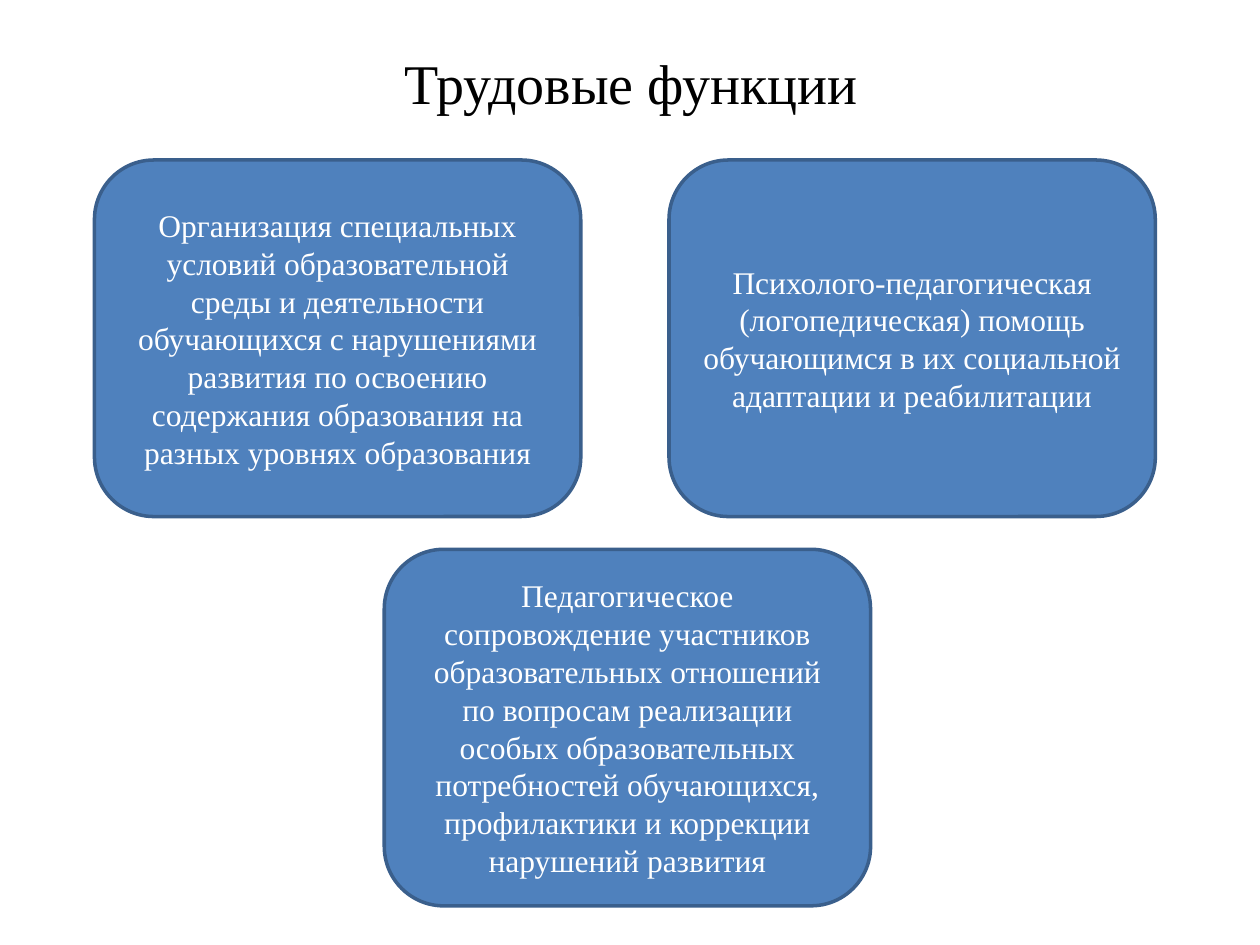
"""Build a slide with three rounded boxes of job functions."""
from pptx import Presentation
from pptx.dml.color import RGBColor
from pptx.enum.shapes import MSO_SHAPE
from pptx.enum.text import MSO_ANCHOR, PP_ALIGN
from pptx.util import Inches, Pt

BLACK = RGBColor(0x00, 0x00, 0x00)
WHITE = RGBColor(0xFF, 0xFF, 0xFF)
BLUE = RGBColor(0x4F, 0x81, 0xBD)
NAVY = RGBColor(0x3A, 0x5F, 0x8C)


def write(shape, text, size, color):
    frame = shape.text_frame
    frame.word_wrap = True
    frame.vertical_anchor = MSO_ANCHOR.MIDDLE
    line = frame.paragraphs[0]
    line.text = text
    line.alignment = PP_ALIGN.CENTER
    line.font.name = "Times New Roman"
    line.font.size = Pt(size)
    line.font.color.rgb = color


deck = Presentation()
deck.slide_width = Inches(10)
deck.slide_height = Inches(7.5)
slide = deck.slides.add_slide(deck.slide_layouts[6])

title = slide.shapes.add_textbox(Inches(0.51), Inches(0.03), Inches(9), Inches(1.25))
write(title, "Трудовые функции", 32, BLACK)

items = [
    (0.75, 1.27, "Организация специальных условий образовательной среды и "
                 "деятельности обучающихся с нарушениями развития по освоению "
                 "содержания образования на разных уровнях образования"),
    (3.05, 4.36, "Педагогическое сопровождение участников образовательных "
                 "отношений по вопросам реализации особых образовательных "
                 "потребностей обучающихся, профилактики и коррекции "
                 "нарушений развития"),
    (5.31, 1.27, "Психолого-педагогическая (логопедическая) помощь обучающимся "
                 "в их социальной адаптации и реабилитации"),
]
for left, top, text in items:
    box = slide.shapes.add_shape(
        MSO_SHAPE.ROUNDED_RECTANGLE,
        Inches(left), Inches(top), Inches(3.86), Inches(2.83))
    box.shadow.inherit = False
    box.fill.solid()
    box.fill.fore_color.rgb = BLUE
    box.line.color.rgb = NAVY
    box.line.width = Pt(2)
    write(box, text, 18, WHITE)

deck.save("out.pptx")
